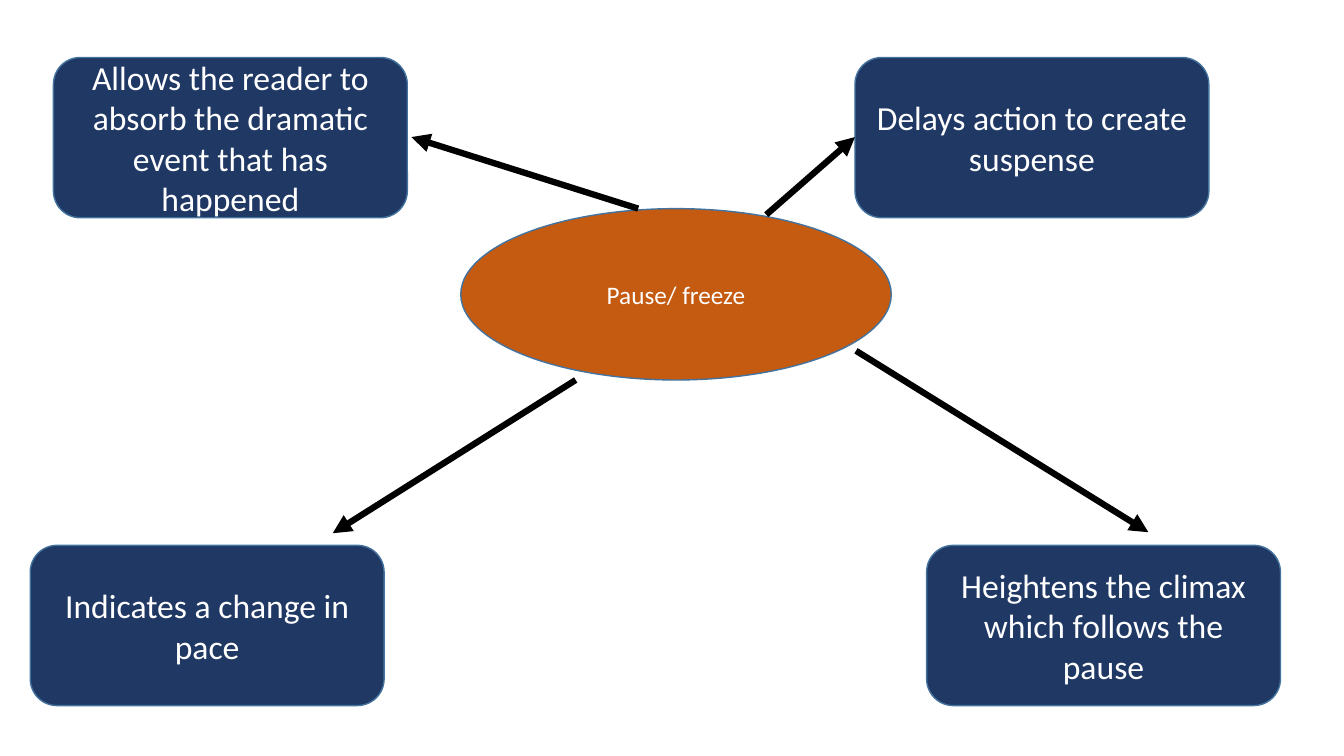
from dataclasses import dataclass

from lxml.etree import SubElement
from pptx import Presentation
from pptx.dml.color import RGBColor as RGB
from pptx.enum.shapes import MSO_CONNECTOR, MSO_SHAPE
from pptx.enum.text import MSO_ANCHOR, PP_ALIGN
from pptx.oxml.ns import qn
from pptx.util import Inches, Pt


@dataclass(frozen=True)
class Theme:
    font: str = "Calibri"
    topic_size: int = 18
    effect_size: int = 24
    topic_fill: RGB = RGB(0xC5, 0x5A, 0x11)
    effect_fill: RGB = RGB(0x20, 0x38, 0x64)
    outline: RGB = RGB(0x43, 0x73, 0x9E)
    text: RGB = RGB(0xFF, 0xFF, 0xFF)
    arrow: RGB = RGB(0, 0, 0)
    outline_width: float = 1
    arrow_width: float = 4.5


THEME = Theme()
TOPIC_BOX = (4.57, 2.07, 4.27, 1.7)
EFFECT_SIZE = (3.51, 1.59)
TOP_ROW, BOTTOM_ROW = 0.57, 5.41

# Effect text, box corner, arrow start, arrow tip
EFFECTS = [
    ("Delays action to create suspense",
     (8.48, TOP_ROW), (7.6, 2.13), (8.48, 1.36)),
    ("Allows the reader to absorb the dramatic event that has happened",
     (0.53, TOP_ROW), (6.33, 2.07), (4.08, 1.36)),
    ("Indicates a change in pace",
     (0.3, BOTTOM_ROW), (5.71, 3.77), (3.3, 5.29)),
    ("Heightens the climax which follows the pause",
     (9.19, BOTTOM_ROW), (8.49, 3.48), (11.39, 5.28)),
]


def add_bubble(s, kind, box, text, fill, size):
    sp = s.shapes.add_shape(kind, *map(Inches, box))
    sp.shadow.inherit = False
    sp.fill.solid()
    sp.fill.fore_color.rgb = fill
    sp.line.color.rgb = THEME.outline
    sp.line.width = Pt(THEME.outline_width)
    tf = sp.text_frame
    tf.word_wrap = True
    tf.vertical_anchor = MSO_ANCHOR.MIDDLE
    p = tf.paragraphs[0]
    p.text = text
    p.alignment = PP_ALIGN.CENTER
    p.font.name = THEME.font
    p.font.size = Pt(size)
    p.font.color.rgb = THEME.text


def add_arrow(s, start, tip):
    cxn = s.shapes.add_connector(
        MSO_CONNECTOR.STRAIGHT, *map(Inches, start + tip))
    cxn.line.color.rgb = THEME.arrow
    cxn.line.width = Pt(THEME.arrow_width)
    SubElement(cxn.line._get_or_add_ln(), qn("a:tailEnd"), type="triangle")
    SubElement(cxn._element.spPr, qn("a:effectLst"))


def add_topic(s, box):
    add_bubble(s, MSO_SHAPE.OVAL, box, "Pause/ freeze",
               THEME.topic_fill, THEME.topic_size)


def add_effect(s, box, text):
    add_bubble(s, MSO_SHAPE.ROUNDED_RECTANGLE, box, text,
               THEME.effect_fill, THEME.effect_size)


def main():
    prs = Presentation()
    prs.slide_width, prs.slide_height = Inches(13.33), Inches(7.5)
    s = prs.slides.add_slide(prs.slide_layouts[6])
    add_topic(s, TOPIC_BOX)
    for text, corner, start, tip in EFFECTS:
        add_effect(s, corner + EFFECT_SIZE, text)
        add_arrow(s, start, tip)
    prs.save("out.pptx")


if __name__ == "__main__":
    main()
